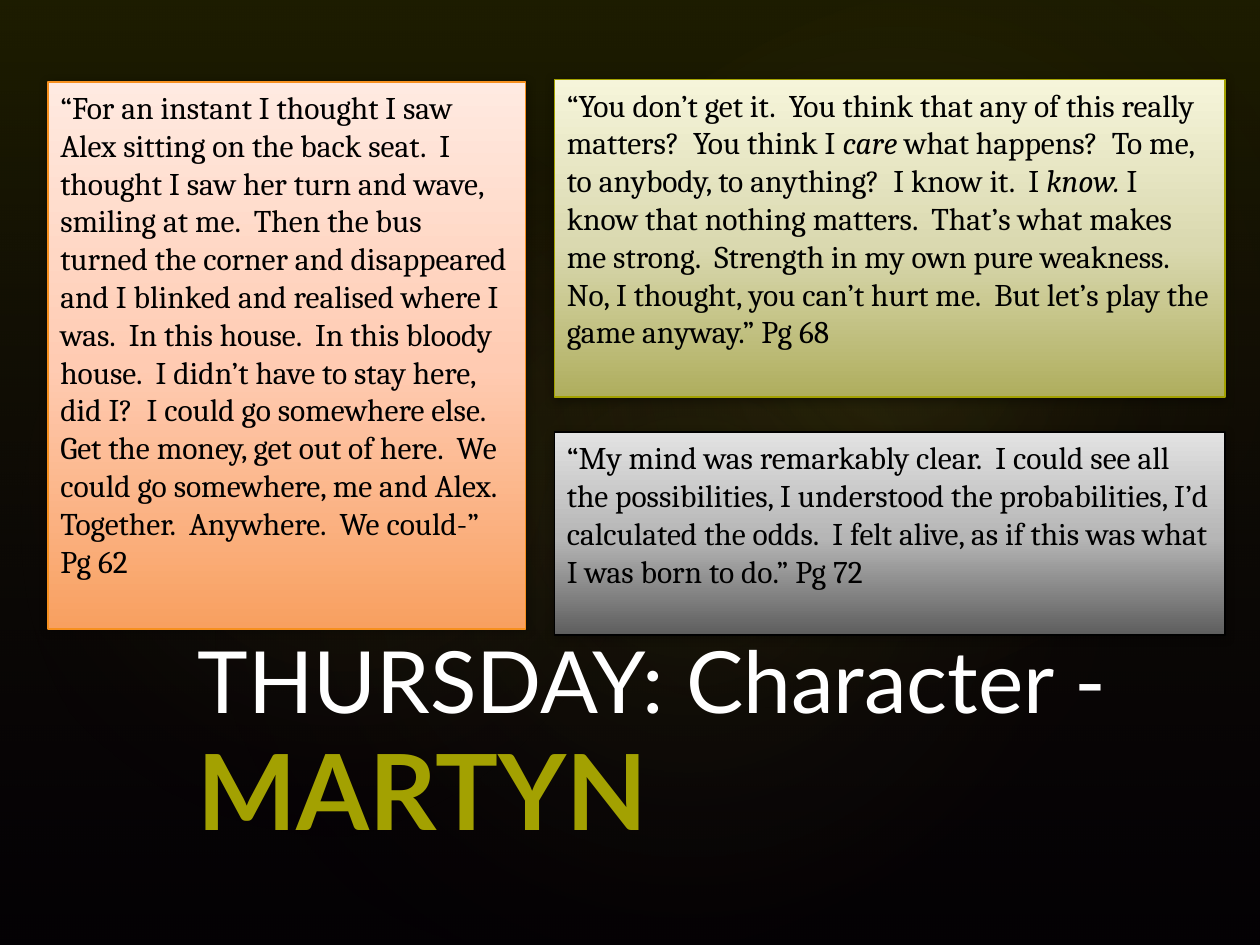
from lxml import etree
from pptx import Presentation
from pptx.dml.color import RGBColor
from pptx.enum.shapes import MSO_SHAPE
from pptx.enum.text import MSO_ANCHOR, PP_ALIGN
from pptx.oxml.ns import qn
from pptx.util import Inches, Pt

RECTANGLE, OVAL = MSO_SHAPE.RECTANGLE, MSO_SHAPE.OVAL
TOP, BOTTOM = MSO_ANCHOR.TOP, MSO_ANCHOR.BOTTOM
LEFT = PP_ALIGN.LEFT

COLORS = {
    "black": "000000", "white": "FFFFFF", "olive": "A3A101", "orange": "F7901E",
    "dark olive": "525000", "plum": "2B142D", "yellow": "FEFB31",
}
# Gradient stops run from the bottom of a card to its top
CARD_STOPS = {
    "orange": [(0, "F8A060"), (48, "FFCBB2"), (100, "FFEAE1")],
    "olive": [(0, "AFAE5E"), (48, "DAD9B0"), (100, "F6F5DA")],
    "black": [(0, "5E5E5E"), (48, "B6B6B6"), (100, "E2E2E2")],
}


def add_color(parent, color, opacity=100):
    element = etree.SubElement(parent, qn("a:srgbClr"), val=color)
    if opacity < 100:
        etree.SubElement(element, qn("a:alpha"), val=str(opacity * 1000))


def write_text(paragraph, text, size=18, font="Cambria", color="black",
               bold=False, italic=False):
    run = paragraph.add_run()
    run.text = text
    run.font.size = Pt(size)
    run.font.name = font
    run.font.bold = bold
    run.font.italic = italic
    run.font.color.rgb = RGBColor.from_string(COLORS[color])


class SlideBuilder:
    def __init__(self, presentation):
        self.slide = presentation.slides.add_slide(presentation.slide_layouts[6])
        background = self.slide.background.fill
        background.solid()
        background.fore_color.rgb = RGBColor.from_string(COLORS["black"])

    def gradient_shape(self, kind, box, stops, angle=None):
        """Add a shape with a linear gradient, or a circular one without angle."""
        shape = self.slide.shapes.add_shape(kind, *map(Inches, box))
        gradient = etree.Element(qn("a:gradFill"), rotWithShape="1")
        stop_list = etree.SubElement(gradient, qn("a:gsLst"))
        for position, *color in stops:
            stop = etree.SubElement(stop_list, qn("a:gs"), pos=str(position * 1000))
            add_color(stop, *color)
        if angle is None:
            circle = etree.SubElement(gradient, qn("a:path"), path="circle")
            etree.SubElement(circle, qn("a:fillToRect"),
                             dict.fromkeys("ltrb", "50000"))
        else:
            etree.SubElement(gradient, qn("a:lin"), ang=str(angle * 60000), scaled="0")
        shape._element.spPr.find(qn("a:prstGeom")).addnext(gradient)
        shape.line.fill.background()
        shape.shadow.inherit = False
        return shape

    def glow(self, box, rotation, opacity):
        stops = [(0, COLORS["yellow"], opacity), (58, COLORS["plum"], 0)]
        self.gradient_shape(OVAL, box, stops).rotation = rotation

    def quote_card(self, box, theme, paragraphs):
        """Each paragraph is a list of pieces, alternately upright and italic."""
        card = self.gradient_shape(RECTANGLE, box, CARD_STOPS[theme], 270)
        card.line.color.rgb = RGBColor.from_string(COLORS[theme])
        card.line.width = Pt(1)
        # Soft shadow straight below
        effects = card._element.spPr.find(qn("a:effectLst"))
        shadow = etree.SubElement(effects, qn("a:outerShdw"), blurRad=str(Pt(5)),
                                  dist=str(Pt(1)), dir="5400000", rotWithShape="0")
        add_color(shadow, COLORS["black"], 32)
        frame = card.text_frame
        frame.word_wrap = True
        frame.vertical_anchor = TOP
        for index, pieces in enumerate(paragraphs):
            paragraph = frame.add_paragraph() if index else frame.paragraphs[0]
            paragraph.alignment = LEFT
            for number, piece in enumerate(pieces):
                write_text(paragraph, piece, italic=number % 2 == 1)

    def title(self, box, lead, name):
        frame = self.slide.shapes.add_textbox(*map(Inches, box)).text_frame
        frame.word_wrap = True
        frame.vertical_anchor = BOTTOM
        paragraph = frame.paragraphs[0]
        paragraph.line_spacing = 0.96
        write_text(paragraph, lead, size=49, font="Lato", color="white")
        write_text(paragraph, name, size=60, font="Lato", color="olive", bold=True)


def main():
    presentation = Presentation()
    presentation.slide_width, presentation.slide_height = Inches(10), Inches(7.5)
    builder = SlideBuilder(presentation)

    # Backdrop: dark wash and three faint glows
    builder.gradient_shape(
        RECTANGLE, (0, 0, 10, 7.5),
        [(0, COLORS["dark olive"], 36), (100, COLORS["plum"], 10)], 90)
    builder.glow((1.5, 1.14, 7.92, 6.24), 328.7, 7)
    builder.glow((-0.3, 1.28, 6.06, 4.9), 294.3, 8)
    builder.glow((3.58, 0.13, 7.09, 5.2), 328.7, 8)

    # Title
    builder.title((1.47, 5.83, 8.25, 1), "THURSDAY: Character - ", "MARTYN")

    # Quotations
    builder.quote_card((0.38, 0.65, 3.79, 4.34), "orange", [[
        "“For an instant I thought I saw Alex sitting on the back seat.  "
        "I thought I saw her turn and wave, smiling at me.  Then the bus turned "
        "the corner and disappeared and I blinked and realised where I was.  "
        "In this house.  In this bloody house.  I didn’t have to stay here, did I?  "
        "I could go somewhere else.  Get the money, get out of here.  We could go "
        "somewhere, me and Alex.  Together.  Anywhere.  We could-” Pg 62"]])
    builder.quote_card((4.4, 0.63, 5.32, 2.52), "olive", [
        ["“You don’t get it.  You think that any of this really matters?  "
         "You think I ", "care",
         " what happens?  To me, to anybody, to anything?  I know it.  I ", "know.",
         " I know that nothing matters.  That’s what makes me strong.  "
         "Strength in my own pure weakness."],
        ["No, I thought, you can’t hurt me.  But let’s play the game anyway.” Pg 68"]])
    builder.quote_card((4.4, 3.43, 5.32, 1.61), "black", [[
        "“My mind was remarkably clear.  I could see all the possibilities, "
        "I understood the probabilities, I’d calculated the odds.  I felt alive, "
        "as if this was what I was born to do.” Pg 72"]])

    presentation.save("out.pptx")


if __name__ == "__main__":
    main()
